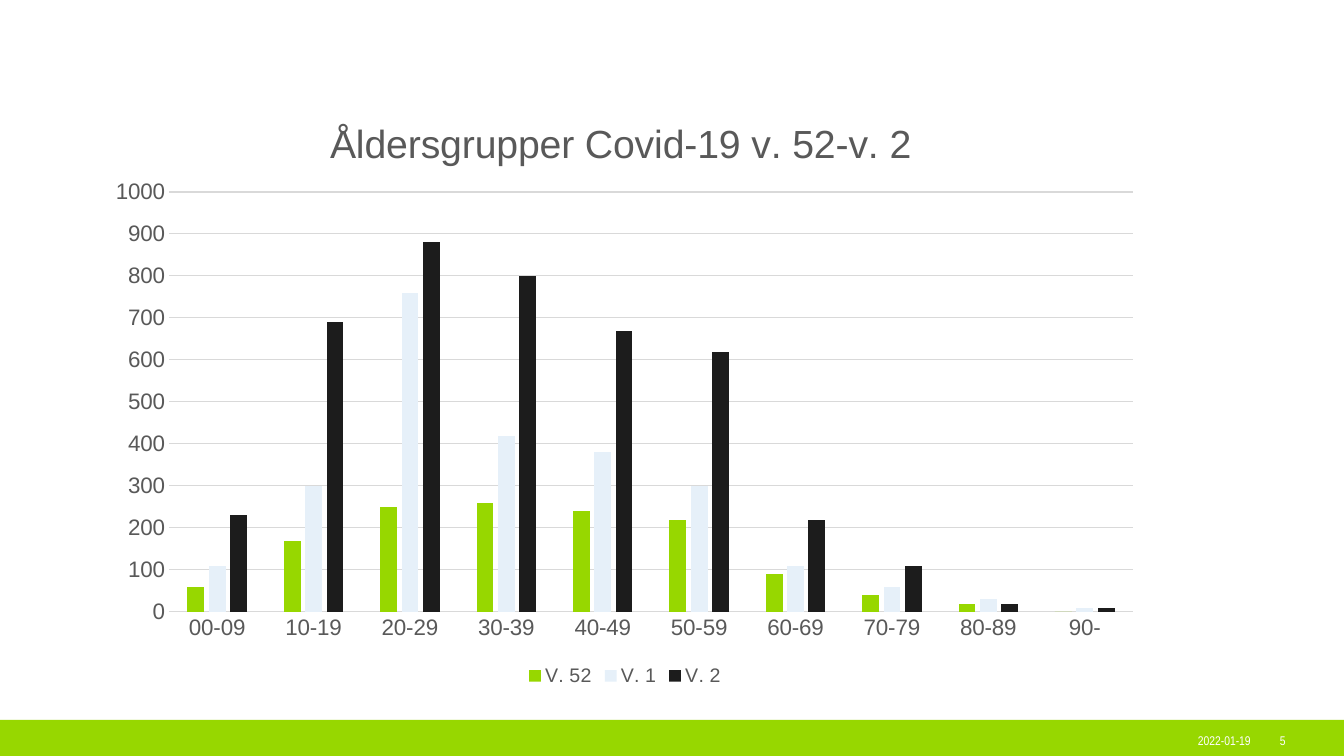
from dataclasses import dataclass

from lxml import etree
from pptx import Presentation
from pptx.chart.data import CategoryChartData
from pptx.dml.color import RGBColor
from pptx.enum.chart import XL_CHART_TYPE, XL_LEGEND_POSITION, XL_TICK_MARK
from pptx.enum.shapes import MSO_SHAPE
from pptx.enum.text import MSO_ANCHOR
from pptx.oxml.ns import qn
from pptx.util import Pt

CLUSTERED = XL_CHART_TYPE.COLUMN_CLUSTERED
LEGEND_BOTTOM = XL_LEGEND_POSITION.BOTTOM
NO_TICK = XL_TICK_MARK.NONE
RECTANGLE = MSO_SHAPE.RECTANGLE
MIDDLE = MSO_ANCHOR.MIDDLE

EMU_PER_PX = 914400 / 100.8
SLIDE_SIZE = (1344, 756)
CHART_BOX = (96, 85, 1058, 606)
PLOT_BOX = (169, 192, 964, 420)
TITLE_CORNER = (323, 112)

AGE_GROUPS = ["00-09", "10-19", "20-29", "30-39", "40-49",
              "50-59", "60-69", "70-79", "80-89", "90-"]
CASES_BY_WEEK = {
    "V. 52": [60, 170, 250, 260, 240, 220, 90, 40, 20, 0],
    "V. 1": [110, 300, 760, 420, 380, 300, 110, 60, 30, 10],
    "V. 2": [230, 690, 880, 800, 670, 620, 220, 110, 20, 10],
}


@dataclass(frozen=True)
class Theme:
    green: str = "97D700"
    pale_blue: str = "E6F0F9"
    black: str = "1C1C1C"
    white: str = "FFFFFF"
    grey_text: str = "595959"
    grey_line: str = "D9D9D9"
    chart_font: str = "Arial"
    footer_font: str = "Arial Narrow"
    title_size: int = 28
    axis_size: int = 16
    legend_size: int = 14
    footer_size: int = 9
    line_width: float = 0.75


THEME = Theme()


def px(length):
    return round(length * EMU_PER_PX)


def box(*lengths):
    return [px(length) for length in lengths]


def style_font(font, name, size, color):
    font.name = name
    font.size = Pt(size)
    font.bold = False
    font.color.rgb = RGBColor.from_string(color)


def style_line(line):
    line.width = Pt(THEME.line_width)
    line.color.rgb = RGBColor.from_string(THEME.grey_line)


def fill_solid(fill, color):
    fill.solid()
    fill.fore_color.rgb = RGBColor.from_string(color)


def add_footer_band(slide):
    band = slide.shapes.add_shape(RECTANGLE, *box(0, 720, 1344, 37))
    band.shadow.inherit = False
    fill_solid(band.fill, THEME.green)
    band.line.fill.background()


def add_footer_text(slide, text, left, width):
    frame = slide.shapes.add_textbox(*box(left, 720, width, 40)).text_frame
    frame.word_wrap = True
    frame.vertical_anchor = MIDDLE
    run = frame.paragraphs[0].add_run()
    run.text = text
    style_font(run.font, THEME.footer_font, THEME.footer_size, THEME.white)


def set_layout(element, position, left, top, size=None):
    """Place a chart part at slide px, as child number `position` of its element."""
    for old_layout in element.findall(qn("c:layout")):
        element.remove(old_layout)
    layout = etree.Element(qn("c:layout"))
    manual = etree.SubElement(layout, qn("c:manualLayout"))
    chart_left, chart_top, chart_width, chart_height = CHART_BOX
    settings = {"xMode": "edge", "yMode": "edge",
                "x": round((left - chart_left) / chart_width, 4),
                "y": round((top - chart_top) / chart_height, 4)}
    if size:
        settings = {"layoutTarget": "inner", **settings,
                    "w": round(size[0] / chart_width, 4),
                    "h": round(size[1] / chart_height, 4)}
    for name, value in settings.items():
        etree.SubElement(manual, qn(f"c:{name}")).set("val", str(value))
    element.insert(position, layout)


def add_chart_title(chart, text):
    chart.has_title = True
    title = chart.chart_title
    run = title.text_frame.paragraphs[0].add_run()
    run.text = text
    style_font(run.font, THEME.chart_font, THEME.title_size, THEME.grey_text)
    title.include_in_layout = False
    set_layout(title._element, 1, *TITLE_CORNER)


def style_axes(chart):
    for axis in (chart.category_axis, chart.value_axis):
        axis.major_tick_mark = NO_TICK
        axis.minor_tick_mark = NO_TICK
        style_font(axis.tick_labels.font, THEME.chart_font,
                   THEME.axis_size, THEME.grey_text)
    style_line(chart.category_axis.format.line)
    values = chart.value_axis
    values.minimum_scale, values.maximum_scale = 0, 1000
    values.major_unit = 100
    values.format.line.fill.background()
    values.has_major_gridlines = True
    style_line(values.major_gridlines.format.line)


def style_columns(plot):
    plot.vary_by_categories = False
    plot.gap_width = 219
    plot.overlap = -27
    colors = (THEME.green, THEME.pale_blue, THEME.black)
    for series, color in zip(plot.series, colors):
        fill_solid(series.format.fill, color)


def add_legend(chart):
    chart.has_legend = True
    chart.legend.position = LEGEND_BOTTOM
    chart.legend.include_in_layout = False
    style_font(chart.legend.font, THEME.chart_font,
               THEME.legend_size, THEME.grey_text)


def add_age_chart(slide):
    data = CategoryChartData()
    data.categories = AGE_GROUPS
    for week, cases in CASES_BY_WEEK.items():
        data.add_series(week, cases)
    chart = slide.shapes.add_chart(CLUSTERED, *box(*CHART_BOX), data).chart
    style_font(chart.font, THEME.chart_font, THEME.legend_size, THEME.grey_text)
    add_chart_title(chart, "Åldersgrupper Covid-19 v. 52-v. 2")
    style_axes(chart)
    plot = chart.plots[0]
    style_columns(plot)
    left, top, *size = PLOT_BOX
    set_layout(plot._element.getparent(), 0, left, top, size)
    add_legend(chart)


def main():
    presentation = Presentation()
    presentation.slide_width, presentation.slide_height = box(*SLIDE_SIZE)
    slide = presentation.slides.add_slide(presentation.slide_layouts[6])
    add_footer_band(slide)
    add_footer_text(slide, "2022-01-19", 1188, 80)
    add_footer_text(slide, "5", 1270, 47)
    add_age_chart(slide)
    presentation.save("out.pptx")


if __name__ == "__main__":
    main()
